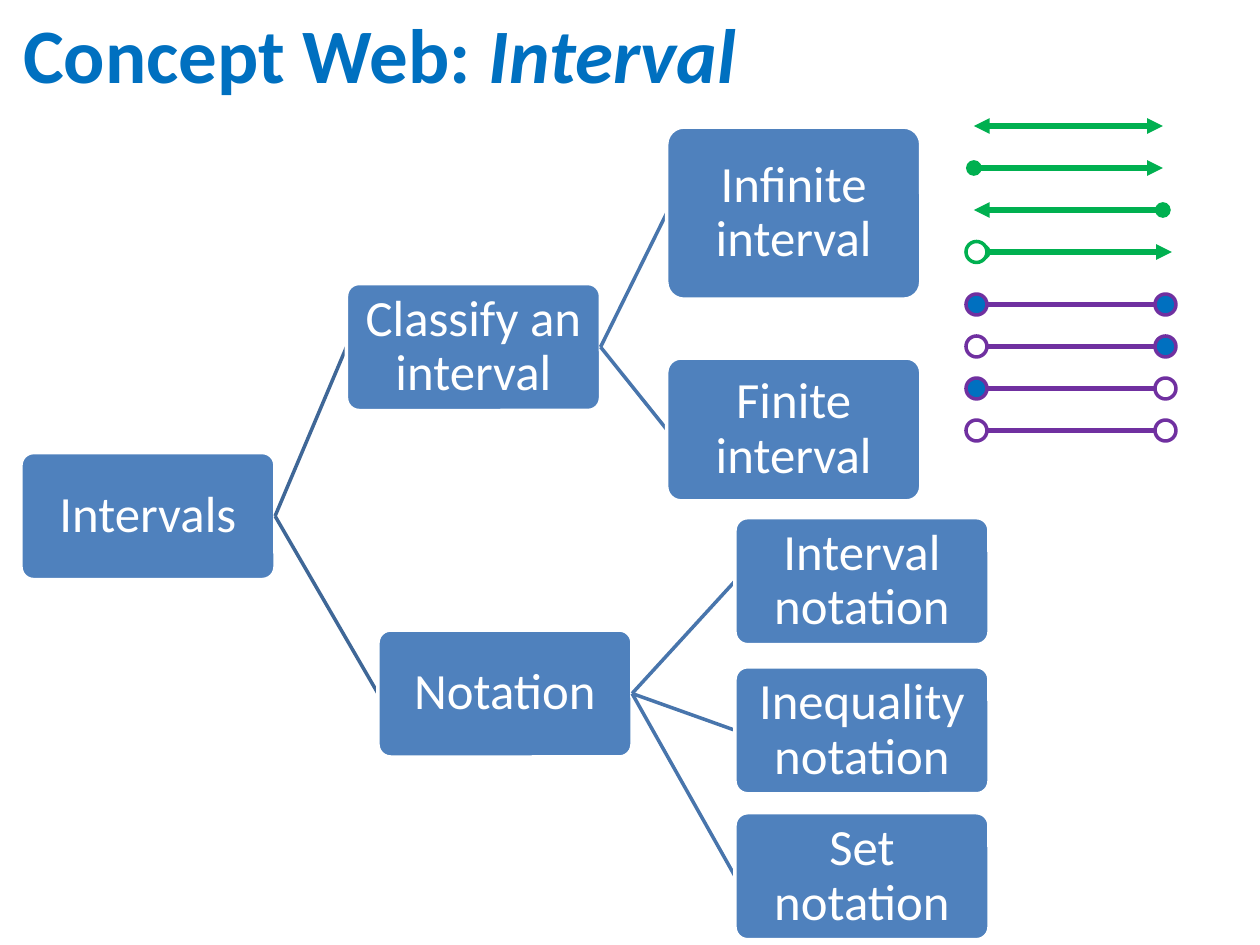
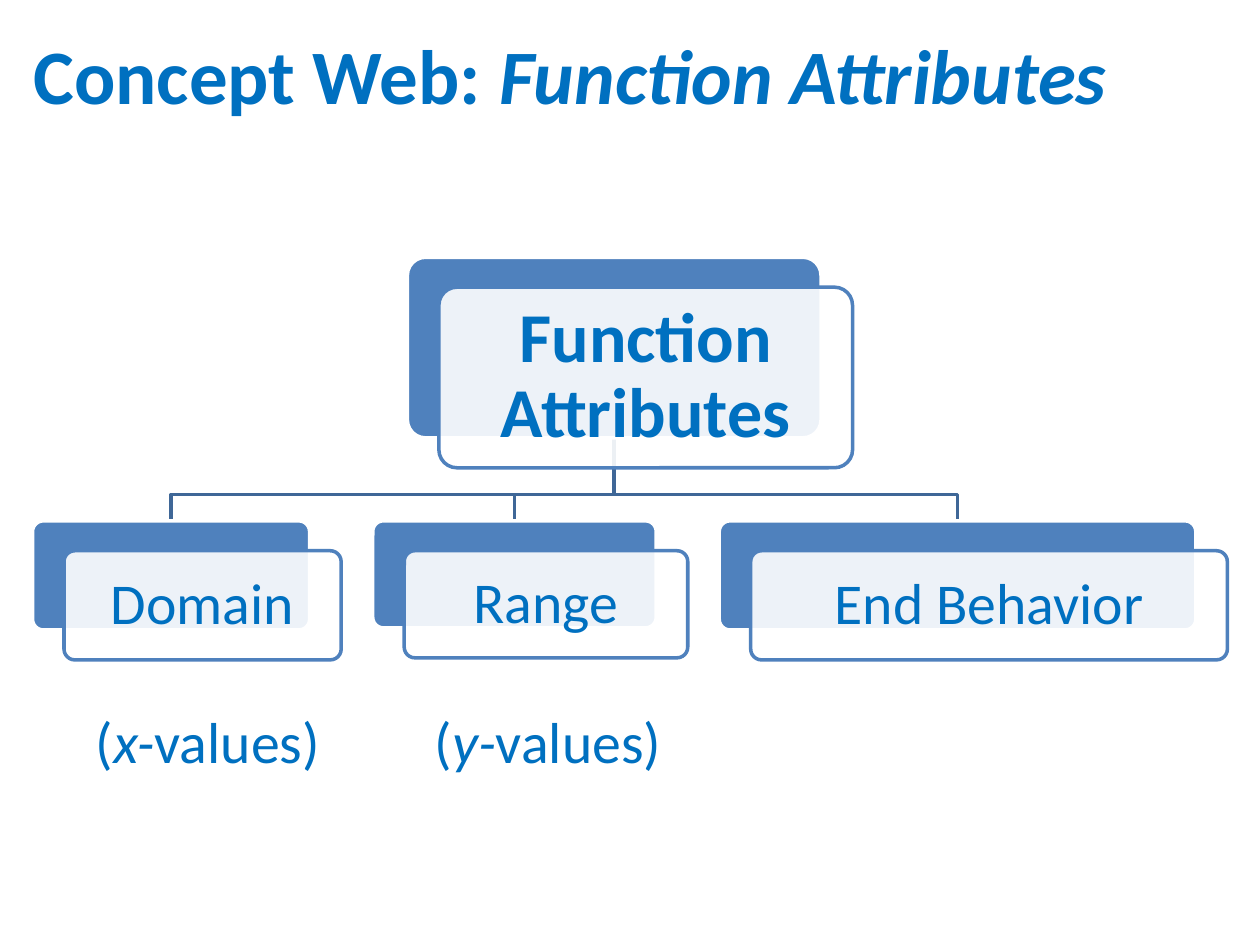
from pptx import Presentation
from pptx import util as u
from pptx.dml import color
from pptx.enum import shapes, text
from pptx.oxml import ns, xmlchemy

# Shared style: a grid of 120 columns by 90 rows
COLUMNS, ROWS = 120, 90
WHITE, TITLE_BLUE, BOX_BLUE = "FFFFFF", "0070C0", "4F81BD"
LEVEL_1, LEVEL_2 = "3F6797", "4875AC"
GREEN, PURPLE = "00B050", "7030A0"
FONT = "Calibri"
TITLE = {"size": u.Pt(44), "bold": True}
NODE = {"size": u.Pt(29)}
ROOT = {"size": u.Pt(40), "bold": True}
LEAF = {"size": u.Pt(33)}


def rgb(hex_string):
    return color.RGBColor.from_string(hex_string)


def set_all(target, values):
    for name, value in values.items():
        setattr(target, name, value)


def element(tag, **values):
    made = xmlchemy.OxmlElement(tag)
    for name, value in values.items():
        made.set(name, str(value))
    return made


class Web:
    """Holds the deck and draws on its current slide."""

    def __init__(self):
        self.deck = Presentation()
        self.deck.slide_width, self.deck.slide_height = u.Inches(10), u.Inches(7.5)
        self.slide = None

    def x(self, columns):
        return round(self.deck.slide_width * columns / COLUMNS)

    def y(self, rows):
        return round(self.deck.slide_height * rows / ROWS)

    def place(self, left, top, width, height):
        return self.x(left), self.y(top), self.x(width), self.y(height)

    def new_slide(self, topic, left, top, width, height):
        self.slide = self.deck.slides.add_slide(self.deck.slide_layouts[5])
        title = self.slide.shapes.title
        spot = self.place(left, top, width, height)
        set_all(title, dict(zip(("left", "top", "width", "height"), spot)))
        self.label(title.text_frame, [("Concept Web: ", False), (topic, True)],
                   TITLE, TITLE_BLUE, margin=None, spacing=1.0,
                   align=text.PP_ALIGN.LEFT, anchor=text.MSO_ANCHOR.TOP)

    def label(self, frame, runs, font, hue, margin, spacing=0.9,
              align=text.PP_ALIGN.CENTER, anchor=text.MSO_ANCHOR.MIDDLE):
        set_all(frame, {"word_wrap": True, "vertical_anchor": anchor,
                        "auto_size": text.MSO_AUTO_SIZE.NONE})
        if margin is not None:
            sides = ("margin_left", "margin_top", "margin_right", "margin_bottom")
            set_all(frame, dict.fromkeys(sides, u.Inches(margin)))
        paragraph = frame.paragraphs[0]
        set_all(paragraph, {"alignment": align, "line_spacing": spacing})
        for words, italic in runs:
            run = paragraph.add_run()
            run.text = words
            set_all(run.font, {"name": FONT, "italic": italic, **font})
            run.font.color.rgb = rgb(hue)

    def stroke(self, item, hue, points):
        item.line.color.rgb = rgb(hue)
        item.line.width = u.Pt(points)

    def shape(self, kind, spot, fill, line, alpha=None):
        item = self.slide.shapes.add_shape(kind, *self.place(*spot))
        item.shadow.inherit = False
        item.fill.solid()
        item.fill.fore_color.rgb = rgb(fill)
        if alpha:
            tint = item._element.spPr.find(".//" + ns.qn("a:srgbClr"))
            tint.append(element("a:alpha", val=alpha * 1000))
        self.stroke(item, line, 2)
        return item

    def box(self, spot, fill=BOX_BLUE, line=WHITE, alpha=None):
        item = self.shape(shapes.MSO_SHAPE.ROUNDED_RECTANGLE, spot, fill, line, alpha)
        item.adjustments[0] = 0.1
        return item

    def line(self, start, end, hue, points, head=None, tail=None):
        item = self.slide.shapes.add_connector(
            shapes.MSO_CONNECTOR.STRAIGHT, self.x(start[0]), self.y(start[1]),
            self.x(end[0]), self.y(end[1]))
        self.stroke(item, hue, points)
        properties = item._element.spPr
        for tag, kind in (("a:headEnd", head), ("a:tailEnd", tail)):
            if kind:
                properties.find(ns.qn("a:ln")).append(element(tag, type=kind))
        properties.append(element("a:effectLst"))
        return item

    def tree(self, node, level=0):
        """Draws a node, then each branch: the line first, the child over it."""
        name, spot, children = node
        parent = self.box(spot)
        self.label(parent.text_frame, [(name, False)], NODE, WHITE, margin=0.05)
        for child in children:
            branch = self.line((0, 0), (0, 0), (LEVEL_1, LEVEL_2)[level], 2)
            branch.begin_connect(parent, 3)
            branch.end_connect(self.tree(child, level + 1), 1)
        return parent

    def interval(self, row, left, hue, ends=(None, None), circles=(None, None)):
        self.line((left, row), (left + 18, row), hue, 3, *ends)
        for column, fill in zip((92, 110), circles):
            if fill:
                self.shape(shapes.MSO_SHAPE.OVAL, (column, row - 1, 2, 2), fill, hue)

    def bracket(self, points, hue):
        corners = [(self.x(column), self.y(row)) for column, row in points]
        builder = self.slide.shapes.build_freeform(*corners[0])
        builder.add_line_segments(corners[1:], close=False)
        item = builder.convert_to_shape()
        item.shadow.inherit = False
        item.fill.background()
        self.stroke(item, hue, 2)

    def card(self, name, spot, font, margin):
        left, top, width, height = spot
        self.box(spot)
        front = self.box((left + 3, top + 2.85, width, height), WHITE, BOX_BLUE, alpha=90)
        self.label(front.text_frame, [(name, False)], font, TITLE_BLUE, margin)

    def caption(self, variable, spot):
        item = self.slide.shapes.add_textbox(*self.place(*spot))
        runs = [("(", False), (variable + "-", True), ("values)", False)]
        self.label(item.text_frame, runs, LEAF, TITLE_BLUE, margin=0.14)


def interval_slide(web):
    web.new_slide("Interval", 1, 0, 80.8, 6)

    # Concept tree
    wide, tall = 24.2, 12.1
    classify = ("Classify an interval", (33, 27, wide, tall), [
        ("Infinite interval", (63.5, 12.1, wide, 16.4), []),
        ("Finite interval", (63.5, 34.1, wide, 13.6), [])])
    notations = [(f"{kind} notation", (70, top, wide, tall), []) for kind, top in
                 (("Interval", 49.3), ("Inequality", 63.5), ("Set", 77.4))]
    notation = ("Notation", (36, 60, wide, tall), notations)
    web.tree(("Intervals", (2, 43.1, wide, tall), [classify, notation]))

    # Infinite intervals
    rays = [("triangle", "triangle"), ("oval", "triangle"), ("triangle", "oval")]
    for index, ends in enumerate(rays):
        web.interval(12 + 4 * index, 92.75, GREEN, ends)
    web.interval(24, 93.6, GREEN, ("oval", "triangle"), (WHITE, None))

    # Finite intervals: blue ends are closed, white ends are open
    closed, opened = TITLE_BLUE, WHITE
    segments = [(closed, closed), (opened, closed), (closed, opened), (opened, opened)]
    for index, circles in enumerate(segments):
        web.interval(29 + 4 * index, 93.6, PURPLE, circles=circles)


def attributes_slide(web):
    web.new_slide("Function Attributes", 2, 2, 118, 12)
    root = (38.8, 24.5, 39.4, 17.2)
    trunk, root_bottom = root[0] + root[2] / 2, root[1] + root[3]
    leaf_top, bend, gap = 49.6, 47.1, 6

    # Attributes side by side with equal gaps
    leaves, left = [], 3.1
    for name, width, height, variable in (("Domain", 26.4, 10.4, "x"),
                                          ("Range", 27, 10.2, "y"),
                                          ("End Behavior", 45.4, 10.4, None)):
        leaves.append((name, (left, leaf_top, width, height), variable))
        left += width + gap

    # Brackets lie behind the cards
    for _, (left, _, width, _), _ in reversed(leaves):
        middle = left + width / 2
        web.bracket([(trunk, root_bottom), (trunk, bend), (middle, bend),
                     (middle, leaf_top)], LEVEL_1)

    web.card("Function Attributes", root, ROOT, margin=0.2)
    for name, spot, variable in leaves:
        web.card(name, spot, LEAF, margin=0.16)
        if variable:
            web.caption(variable, (spot[0] + 3.8, 66, 25.8, 9.8))


def main():
    web = Web()
    interval_slide(web)
    attributes_slide(web)
    web.deck.save("out.pptx")


if __name__ == "__main__":
    main()
